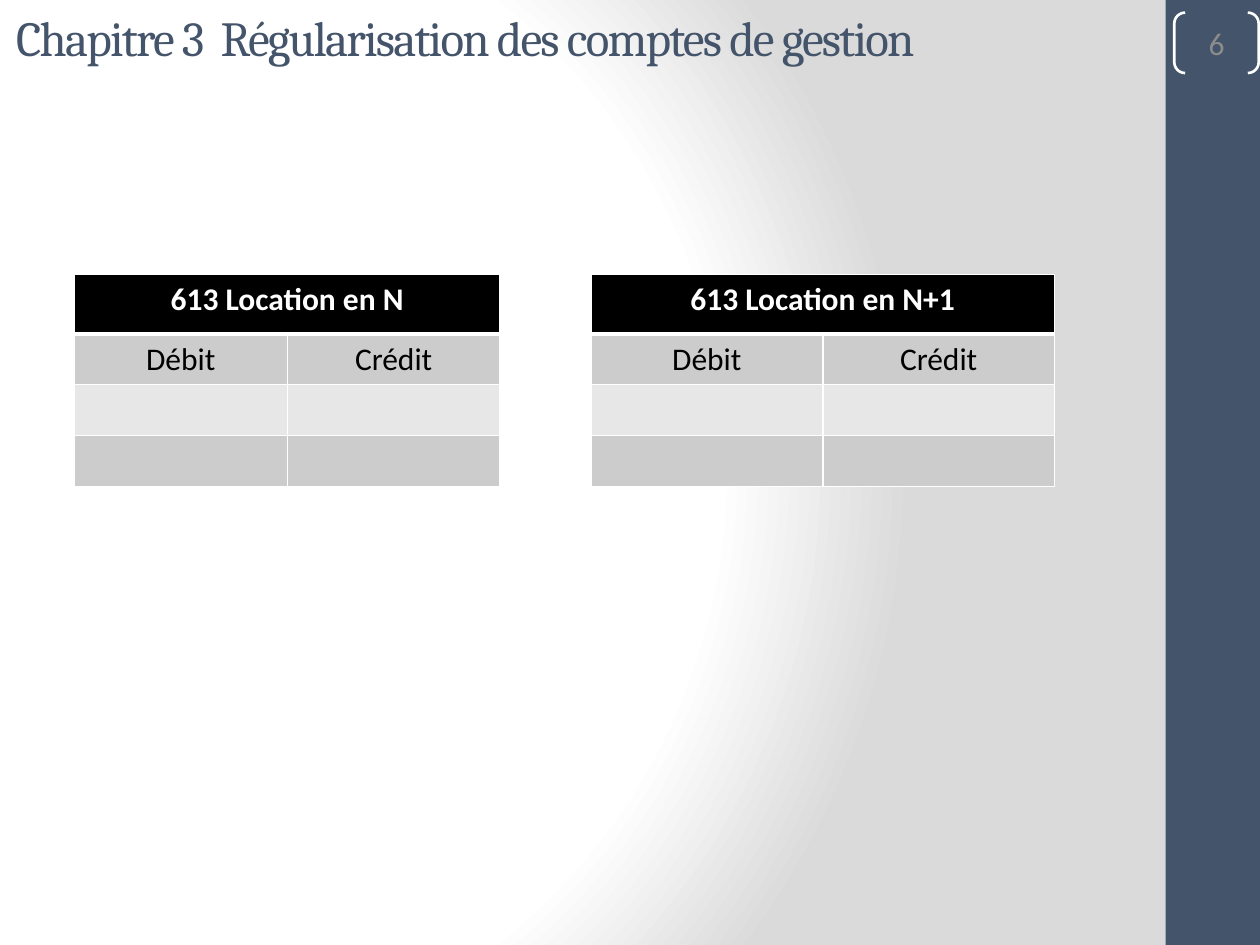
import pptx
import pptx.util
import pptx.dml.color
import pptx.enum.shapes
import pptx.enum.text
import pptx.oxml
import pptx.oxml.ns
import lxml.etree

COLORS = {
    "white": "FFFFFF",
    "black": "000000",
    "backdrop": "DADADA",
    "navy": "44546A",
    "number": "8C8C8C",
    "band_dark": "CCCCCC",
    "band_light": "E7E7E7",
}
COLUMNS, ROWS = 100, 75
ROW_HEIGHTS = (4.7, 4, 4.05, 4.05)
ROW_FILLS = ("black", "band_dark", "band_light", "band_dark")
ALIGN = pptx.enum.text.PP_ALIGN
ANCHOR = pptx.enum.text.MSO_ANCHOR
SHAPE = pptx.enum.shapes.MSO_SHAPE


def rgb(name):
    return pptx.dml.color.RGBColor.from_string(COLORS[name])


class SlideBuilder:
    body_font = "Calibri"
    title_font = "Cambria"

    def __init__(self, presentation):
        self.column = presentation.slide_width / COLUMNS
        self.row = presentation.slide_height / ROWS
        self.slide = presentation.slides.add_slide(presentation.slide_layouts[6])

    def box(self, left, top, width, height):
        return (round(left * self.column), round(top * self.row),
                round(width * self.column), round(height * self.row))

    def background(self, stops):
        stop_xml = "".join(
            f'<a:gs pos="{percent * 1000}"><a:srgbClr val="{COLORS[color]}"/></a:gs>'
            for percent, color in stops)
        background = pptx.oxml.parse_xml(
            f'<p:bg {pptx.oxml.ns.nsdecls("p", "a")}><p:bgPr>'
            f'<a:gradFill rotWithShape="1"><a:gsLst>{stop_xml}</a:gsLst>'
            '<a:path path="circle"><a:fillToRect l="20000" t="50000" r="100000" b="50000"/>'
            '</a:path></a:gradFill><a:effectLst/></p:bgPr></p:bg>')
        self.slide.element.cSld.insert(0, background)

    def set_text(self, text_frame, text, size, color, font=body_font, align=ALIGN.CENTER, bold=False):
        text_frame.text = text
        paragraph = text_frame.paragraphs[0]
        paragraph.alignment = align
        for run in paragraph.runs:
            run.font.name = font
            run.font.size = pptx.util.Pt(size)
            run.font.bold = bold
            run.font.color.rgb = rgb(color)
        return paragraph

    def panel(self, place, color):
        shape = self.slide.shapes.add_shape(SHAPE.RECTANGLE, *self.box(*place))
        shape.shadow.inherit = False
        shape.fill.solid()
        shape.fill.fore_color.rgb = rgb(color)
        shape.line.fill.background()

    def page_number(self, place, text):
        shape = self.slide.shapes.add_shape(SHAPE.DOUBLE_BRACKET, *self.box(*place))
        shape.shadow.inherit = False
        shape.adjustments[0] = 0.18
        shape.fill.background()
        shape.line.color.rgb = rgb("white")
        shape.line.width = pptx.util.Pt(1.5)
        frame = shape.text_frame
        frame.margin_left = frame.margin_right = frame.margin_top = frame.margin_bottom = 0
        frame.vertical_anchor = ANCHOR.MIDDLE
        self.set_text(frame, text, 18, "number")

    def title(self, place, text):
        frame = self.slide.shapes.add_textbox(*self.box(*place)).text_frame
        frame.word_wrap = True
        frame.vertical_anchor = ANCHOR.MIDDLE
        paragraph = self.set_text(frame, text, 28, "navy", self.title_font, ALIGN.LEFT)
        paragraph.runs[0].font._element.set("spc", "-100")

    def cell_style(self, cell, color, bottom_width):
        cell.fill.solid()
        cell.fill.fore_color.rgb = rgb(color)
        properties = cell._tc.get_or_add_tcPr()
        widths = {"lnL": 1, "lnR": 1, "lnT": 1, "lnB": bottom_width}
        for index, (side, width) in enumerate(widths.items()):
            line = lxml.etree.Element(pptx.oxml.ns.qn(f"a:{side}"), w=str(pptx.util.Pt(width)))
            fill = lxml.etree.SubElement(line, pptx.oxml.ns.qn("a:solidFill"))
            lxml.etree.SubElement(fill, pptx.oxml.ns.qn("a:srgbClr"), val=COLORS["white"])
            properties.insert(index, line)

    def account(self, left, top, width, heading):
        place = self.box(left, top, width, sum(ROW_HEIGHTS))
        table = self.slide.shapes.add_table(len(ROW_HEIGHTS), 2, *place).table
        for index, (height, color) in enumerate(zip(ROW_HEIGHTS, ROW_FILLS)):
            table.rows[index].height = round(height * self.row)
            for column in range(2):
                self.cell_style(table.cell(index, column), color, 3 if index == 0 else 1)
        table.cell(0, 0).merge(table.cell(0, 1))
        self.set_text(table.cell(0, 0).text_frame, heading, 18, "white", bold=True)
        for column, label in enumerate(("Débit", "Crédit")):
            self.set_text(table.cell(1, column).text_frame, label, 18, "black")


def main():
    presentation = pptx.Presentation()
    presentation.slide_width = pptx.util.Inches(10)
    presentation.slide_height = pptx.util.Inches(7.5)
    builder = SlideBuilder(presentation)
    builder.background([(0, "white"), (75, "white"), (100, "backdrop")])
    builder.panel((92.5, 0, 7.5, ROWS), "navy")
    builder.page_number((93.2, 1, 6.7, 4.8), "6")
    builder.title((0.3, -0.2, 83.3, 6.2), "Chapitre 3  Régularisation des comptes de gestion")
    builder.account(5.9, 21.8, 33.8, "613 Location en N")
    builder.account(46.9, 21.8, 36.8, "613 Location en N+1")
    presentation.save("out.pptx")


if __name__ == "__main__":
    main()
